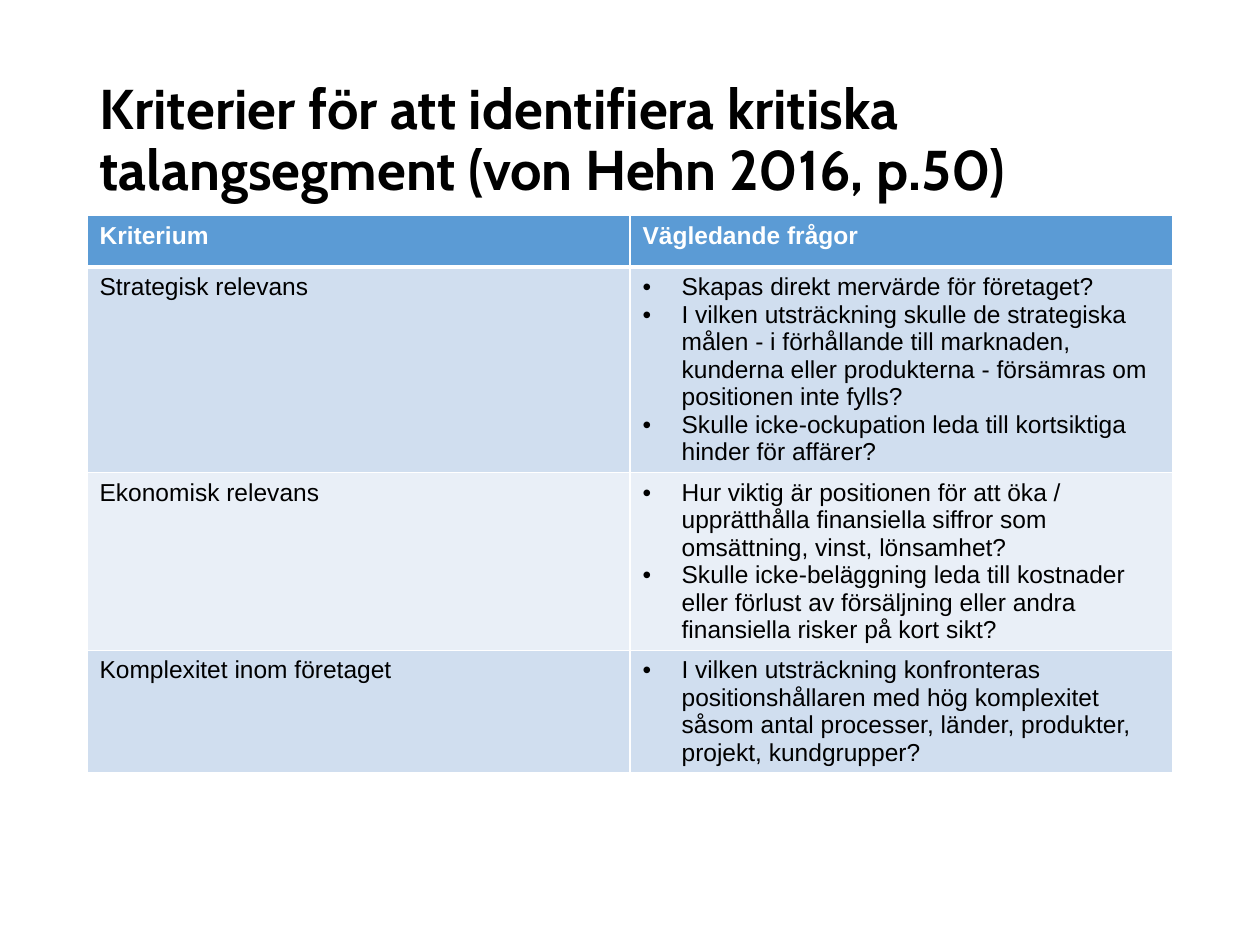
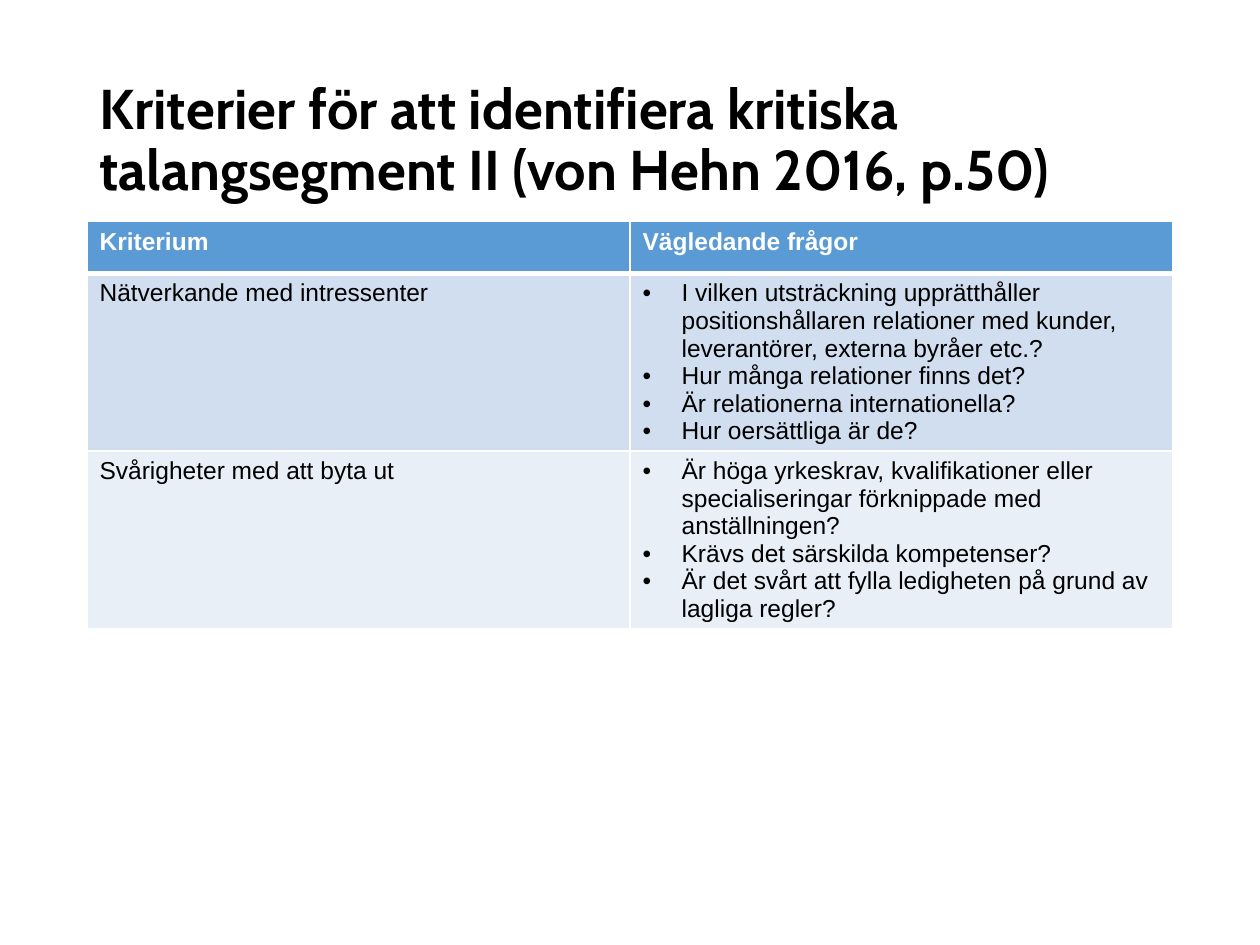
from lxml import etree
from pptx import Presentation
from pptx.dml.color import RGBColor
from pptx.enum.text import MSO_ANCHOR, MSO_AUTO_SIZE, PP_ALIGN
from pptx.oxml.ns import qn
from pptx.util import Inches, Pt

MIDDLE = MSO_ANCHOR.MIDDLE
NO_AUTOFIT = MSO_AUTO_SIZE.NONE
LEFT_ALIGN = PP_ALIGN.LEFT

# Shared style
TITLE_FONT, TABLE_FONT = "Cabin", "Arial"
BLACK, WHITE = "000000", "FFFFFF"
HEADER_FILL = "5B9BD5"
BAND_FILLS = ["D0DEEF", "E9EFF7"]
LEFT, WIDTH = 0.69, 8.62
ROW_HEIGHT = 0.41
BULLET_INDENT = Inches(0.31)
HEADINGS = ("Kriterium", ["Vägledande frågor"])

# Slide content: title, top of the table, criteria with their questions
SLIDES = [
    ("Kriterier för att identifiera kritiska talangsegment (von Hehn 2016, p.50)", 1.71, [
        ("Strategisk relevans", [
            "Skapas direkt mervärde för företaget?",
            "I vilken utsträckning skulle de strategiska målen - i förhållande till "
            "marknaden, kunderna eller produkterna - försämras om positionen inte fylls?",
            "Skulle icke-ockupation leda till kortsiktiga hinder för affärer?",
        ]),
        ("Ekonomisk relevans", [
            "Hur viktig är positionen för att öka / upprätthålla finansiella siffror "
            "som omsättning, vinst, lönsamhet?",
            "Skulle icke-beläggning leda till kostnader eller förlust av försäljning "
            "eller andra finansiella risker på kort sikt?",
        ]),
        ("Komplexitet inom företaget", [
            "I vilken utsträckning konfronteras positionshållaren med hög komplexitet "
            "såsom antal processer, länder, produkter, projekt, kundgrupper?",
        ]),
    ]),
    ("Kriterier för att identifiera kritiska talangsegment II (von Hehn 2016, p.50)", 1.76, [
        ("Nätverkande med intressenter", [
            "I vilken utsträckning upprätthåller positionshållaren relationer med "
            "kunder, leverantörer, externa byråer etc.?",
            "Hur många relationer finns det?",
            "Är relationerna internationella?",
            "Hur oersättliga är de?",
        ]),
        ("Svårigheter med att byta ut", [
            "Är höga yrkeskrav, kvalifikationer eller specialiseringar förknippade "
            "med anställningen?",
            "Krävs det särskilda kompetenser?",
            "Är det svårt att fylla ledigheten på grund av lagliga regler?",
        ]),
    ]),
]


def write_text(paragraph, text, font=TABLE_FONT, size=14, color=BLACK, bold=False, bullet=False):
    if bullet:
        properties = paragraph._p.get_or_add_pPr()
        properties.set("marL", str(BULLET_INDENT))
        properties.set("indent", str(-BULLET_INDENT))
        bullet_color = etree.SubElement(properties, qn("a:buClr"))
        etree.SubElement(bullet_color, qn("a:srgbClr"), val=color)
        etree.SubElement(properties, qn("a:buFont"), typeface=TABLE_FONT)
        etree.SubElement(properties, qn("a:buChar"), char="•")
    span = paragraph.add_run()
    span.text = text
    span.font.name = font
    span.font.size = Pt(size)
    span.font.bold = bold
    span.font.color.rgb = RGBColor.from_string(color)


def style_cell(cell, fill, top_width, bottom_width):
    cell.fill.solid()
    cell.fill.fore_color.rgb = RGBColor.from_string(fill)
    properties = cell._tc.get_or_add_tcPr()
    sides = [("L", 1), ("R", 1), ("T", top_width), ("B", bottom_width)]
    for position, (side, width) in enumerate(sides):
        line = etree.Element(qn("a:ln" + side), w=str(Pt(width)))
        line_fill = etree.SubElement(line, qn("a:solidFill"))
        etree.SubElement(line_fill, qn("a:srgbClr"), val=WHITE)
        properties.insert(position, line)


deck = Presentation()
deck.slide_width, deck.slide_height = Inches(10), Inches(7.5)
title_only = deck.slide_layouts[5]

for title_text, table_top, criteria in SLIDES:
    page = deck.slides.add_slide(title_only)

    # Title
    title = page.shapes.title
    title.left, title.top = Inches(LEFT), Inches(0.4)
    title.width, title.height = Inches(WIDTH), Inches(1.45)
    frame = title.text_frame
    frame.auto_size = NO_AUTOFIT
    frame.word_wrap = True
    frame.vertical_anchor = MIDDLE
    heading = frame.paragraphs[0]
    heading.alignment = LEFT_ALIGN
    heading.line_spacing = 0.9
    write_text(heading, title_text, font=TITLE_FONT, size=32, bold=True)

    # Table of criteria and questions
    rows = [HEADINGS] + criteria
    table = page.shapes.add_table(
        len(rows), 2, Inches(LEFT), Inches(table_top),
        Inches(WIDTH), Inches(ROW_HEIGHT * len(rows))).table
    for row_index, (criterion, questions) in enumerate(rows):
        table.rows[row_index].height = Inches(ROW_HEIGHT)
        is_header = row_index == 0
        fill = HEADER_FILL if is_header else BAND_FILLS[(row_index - 1) % 2]
        color = WHITE if is_header else BLACK
        for column, lines in enumerate([[criterion], questions]):
            cell = table.cell(row_index, column)
            style_cell(cell, fill, top_width=3 if row_index == 1 else 1,
                       bottom_width=3 if is_header else 1)
            frame = cell.text_frame
            for line_index, text in enumerate(lines):
                paragraph = frame.add_paragraph() if line_index else frame.paragraphs[0]
                write_text(paragraph, text, color=color, bold=is_header,
                           bullet=column == 1 and not is_header)

deck.save("out.pptx")
